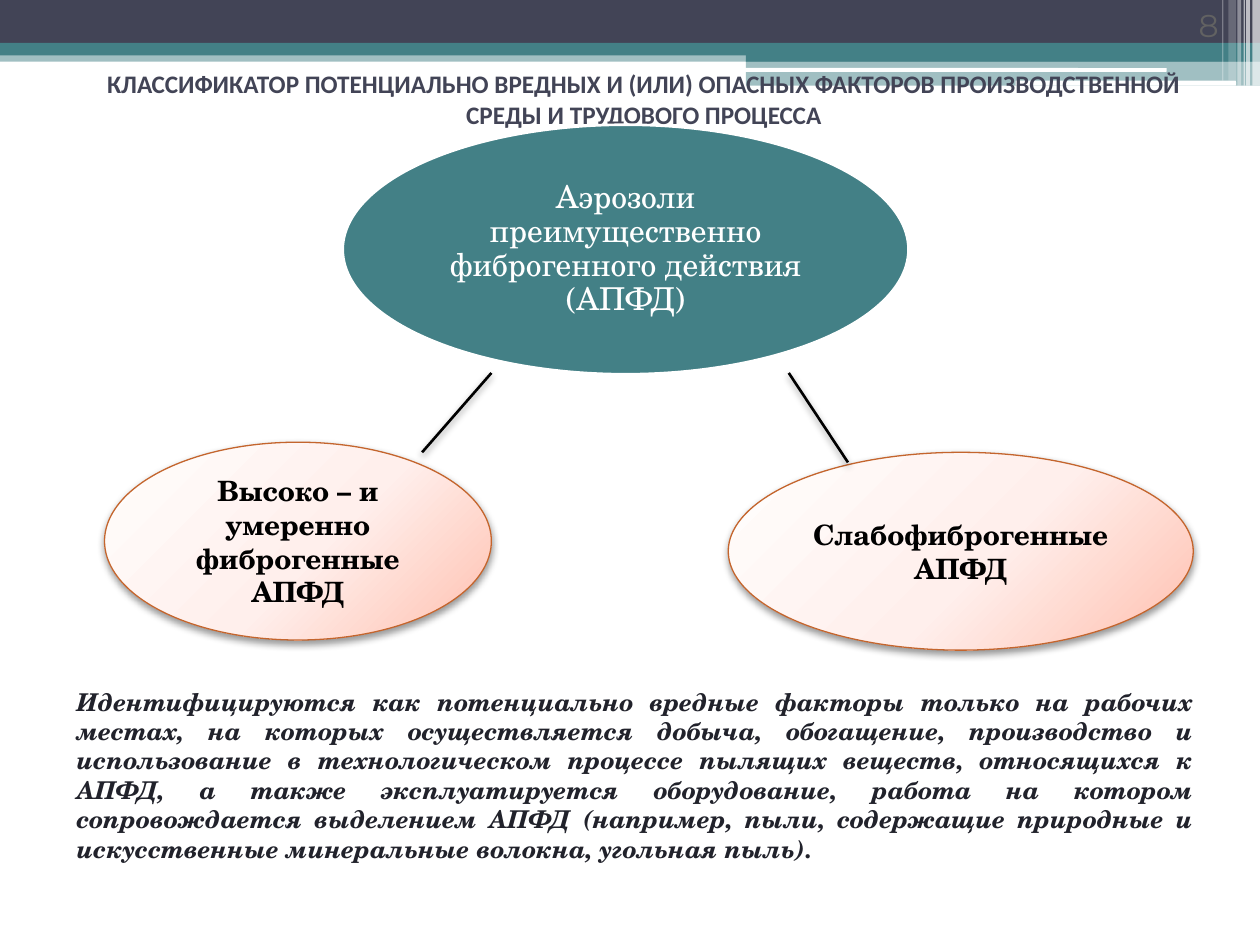
from typing import NamedTuple, Optional

from lxml import etree
from pptx import Presentation
from pptx.dml.color import RGBColor
from pptx.enum.shapes import MSO_CONNECTOR, MSO_SHAPE
from pptx.enum.text import MSO_ANCHOR, PP_ALIGN
from pptx.oxml import parse_xml
from pptx.oxml.ns import nsdecls, qn
from pptx.util import Pt

PX = 9144  # 100 px to the inch
RECTANGLE, ROUNDED, OVAL = MSO_SHAPE.RECTANGLE, MSO_SHAPE.ROUNDED_RECTANGLE, MSO_SHAPE.OVAL
STRAIGHT = MSO_CONNECTOR.STRAIGHT
TOP, MIDDLE, BOTTOM = MSO_ANCHOR.TOP, MSO_ANCHOR.MIDDLE, MSO_ANCHOR.BOTTOM
CENTER, RIGHT, JUSTIFY = PP_ALIGN.CENTER, PP_ALIGN.RIGHT, PP_ALIGN.JUSTIFY

NAVY = RGBColor(0x42, 0x44, 0x56)
TEAL = RGBColor(0x43, 0x80, 0x86)
WHITE = RGBColor(0xFF, 0xFF, 0xFF)
BLACK = RGBColor(0, 0, 0)
INK = RGBColor(0x21, 0x22, 0x2B)
GRAY = RGBColor(0x62, 0x62, 0x62)
ORANGE = RGBColor(0xC4, 0x65, 0x2D)
PEACH_STOPS = (
    (0, RGBColor(0xFF, 0xFE, 0xFD)),
    (55, RGBColor(0xFF, 0xEF, 0xEC)),
    (100, RGBColor(0xFF, 0xBF, 0xAE)),
)
SERIF = "TeX Gyre Schola"


class Box(NamedTuple):
    left: int
    top: int
    width: int
    height: int


class Band(NamedTuple):
    box: Box
    color: RGBColor
    opacity: int = 100
    kind: int = RECTANGLE


class Ellipse(NamedTuple):
    box: Box
    text: str
    font: dict
    line_color: RGBColor
    line_width: float
    fill: Optional[RGBColor] = None  # None gives the peach gradient and a shadow
    inset: int = 10
    line_spacing: float = 1.0


class Link(NamedTuple):
    start: tuple[int, int]
    end: tuple[int, int]


BANDS = [
    Band(Box(0, 40, 1000, 9), TEAL, 50),
    Band(Box(0, 0, 1000, 34), NAVY),
    Band(Box(0, 34, 1000, 10), TEAL),
    Band(Box(592, 39, 408, 10), TEAL),
    Band(Box(592, 48, 408, 20), TEAL, 50),
    Band(Box(591, 54, 335, 3), WHITE, kind=ROUNDED),
    Band(Box(806, 64, 175, 4), WHITE, kind=ROUNDED),
    Band(Box(994, 0, 6, 68), WHITE, 65),
    Band(Box(989, 0, 3, 68), WHITE, 65),
    Band(Box(987, 0, 1, 68), WHITE, 60),
    Band(Box(982, 0, 3, 68), WHITE, 40),
    Band(Box(975, 0, 6, 64), WHITE, 20),
    Band(Box(970, 0, 1, 64), WHITE, 30),
]

TITLE_FONT = {"size": Pt(14.4), "name": "Calibri", "bold": True}
NUMBER_FONT = {"size": Pt(18), "name": "Montserrat"}
BRANCH_FONT = {"size": Pt(16), "name": SERIF, "bold": True}
ROOT_FONT = {"size": Pt(18), "name": SERIF}
NOTE_FONT = {"size": Pt(14), "name": SERIF, "bold": True, "italic": True}

BRANCHES = [
    Ellipse(Box(83, 351, 307, 157), "Высоко – и умеренно фиброгенные АПФД",
            BRANCH_FONT, ORANGE, 0.75),
    Ellipse(Box(578, 359, 369, 157), "Слабофиброгенные АПФД", BRANCH_FONT, ORANGE, 0.75),
]
ROOT = Ellipse(Box(272, 99, 449, 198), "Аэрозоли преимущественно фиброгенного действия (АПФД)",
               ROOT_FONT, WHITE, 1.5, TEAL, inset=2, line_spacing=0.9)
LINKS = [Link((390, 296), (335, 359)), Link((626, 296), (673, 367))]

TITLE = ("КЛАССИФИКАТОР ПОТЕНЦИАЛЬНО ВРЕДНЫХ И (ИЛИ) ОПАСНЫХ ФАКТОРОВ "
         "ПРОИЗВОДСТВЕННОЙ СРЕДЫ И ТРУДОВОГО ПРОЦЕССА")
NOTE = ("Идентифицируются как потенциально вредные факторы только на рабочих местах, "
        "на которых осуществляется добыча, обогащение, производство и использование "
        "в технологическом процессе пылящих веществ, относящихся к АПФД, а также "
        "эксплуатируется оборудование, работа на котором сопровождается выделением АПФД "
        "(например, пыли, содержащие природные и искусственные минеральные волокна, "
        "угольная пыль).")


def emu(box: Box) -> list[int]:
    return [value * PX for value in box]


def write_text(shape, text: str, font: dict, color: RGBColor, align: int, anchor: int) -> None:
    frame = shape.text_frame
    frame.word_wrap = True
    frame.vertical_anchor = anchor
    paragraph = frame.paragraphs[0]
    paragraph.alignment = align
    run = paragraph.add_run()
    run.text = text
    for name, value in font.items():
        setattr(run.font, name, value)
    run.font.color.rgb = color


def add_soft_shadow(shape) -> None:
    properties = shape._element.spPr
    effects = properties.find(qn("a:effectLst"))
    if effects is None:
        effects = etree.SubElement(properties, qn("a:effectLst"))
    effects.append(parse_xml(
        f'<a:outerShdw {nsdecls("a")} blurRad="{Pt(4.1)}" dist="{Pt(2)}" dir="5400000" '
        'rotWithShape="0"><a:srgbClr val="000000"><a:alpha val="40000"/></a:srgbClr>'
        '</a:outerShdw>'))


def fill_with_peach(shape) -> None:
    """Give the shape a circular gradient centred beyond its upper edge."""
    stops = "".join(f'<a:gs pos="{position * 1000}"><a:srgbClr val="{color}"/></a:gs>'
                    for position, color in PEACH_STOPS)
    gradient = parse_xml(
        f'<a:gradFill {nsdecls("a")} rotWithShape="1"><a:gsLst>{stops}</a:gsLst>'
        '<a:path path="circle"><a:fillToRect l="-40000" t="-90000" r="140000" b="190000"/>'
        '</a:path></a:gradFill>')
    shape._element.spPr.find(qn("a:prstGeom")).addnext(gradient)


def add_band(slide, band: Band) -> None:
    shape = slide.shapes.add_shape(band.kind, *emu(band.box))
    shape.shadow.inherit = False
    shape.fill.solid()
    shape.fill.fore_color.rgb = band.color
    shape.line.fill.background()
    if band.opacity < 100:
        color = shape._element.spPr.find(qn("a:solidFill"))[0]
        etree.SubElement(color, qn("a:alpha"), val=str(band.opacity * 1000))


def add_ellipse(slide, ellipse: Ellipse) -> None:
    shape = slide.shapes.add_shape(OVAL, *emu(ellipse.box))
    shape.shadow.inherit = False
    shape.line.color.rgb = ellipse.line_color
    shape.line.width = Pt(ellipse.line_width)
    if ellipse.fill is None:
        fill_with_peach(shape)
        add_soft_shadow(shape)
    else:
        shape.fill.solid()
        shape.fill.fore_color.rgb = ellipse.fill
    color = BLACK if ellipse.fill is None else WHITE
    write_text(shape, ellipse.text, ellipse.font, color, CENTER, MIDDLE)
    frame = shape.text_frame
    frame.margin_left = frame.margin_right = ellipse.inset * PX
    frame.paragraphs[0].line_spacing = ellipse.line_spacing


def add_link(slide, link: Link) -> None:
    ends = [value * PX for value in link.start + link.end]
    connector = slide.shapes.add_connector(STRAIGHT, *ends)
    connector.line.color.rgb = BLACK
    connector.line.width = Pt(1.5)
    add_soft_shadow(connector)


def main() -> None:
    presentation = Presentation()
    presentation.slide_width, presentation.slide_height = 1000 * PX, 750 * PX
    slide = presentation.slides.add_slide(presentation.slide_layouts[5])

    for band in BANDS:
        add_band(slide, band)
    number = slide.shapes.add_textbox(*emu(Box(894, 0, 83, 40)))
    write_text(number, "8", NUMBER_FONT, GRAY, RIGHT, BOTTOM)

    title = slide.shapes.title
    title.left, title.top, title.width, title.height = emu(Box(62, 47, 898, 63))
    write_text(title, TITLE, TITLE_FONT, NAVY, CENTER, MIDDLE)
    slide.shapes._spTree.append(title._element)  # in front of the bands

    for branch in BRANCHES:
        add_ellipse(slide, branch)
    for link in LINKS:
        add_link(slide, link)
    note = slide.shapes.add_textbox(*emu(Box(51, 540, 906, 151)))
    write_text(note, NOTE, NOTE_FONT, INK, JUSTIFY, TOP)
    add_ellipse(slide, ROOT)

    presentation.save("out.pptx")


if __name__ == "__main__":
    main()
